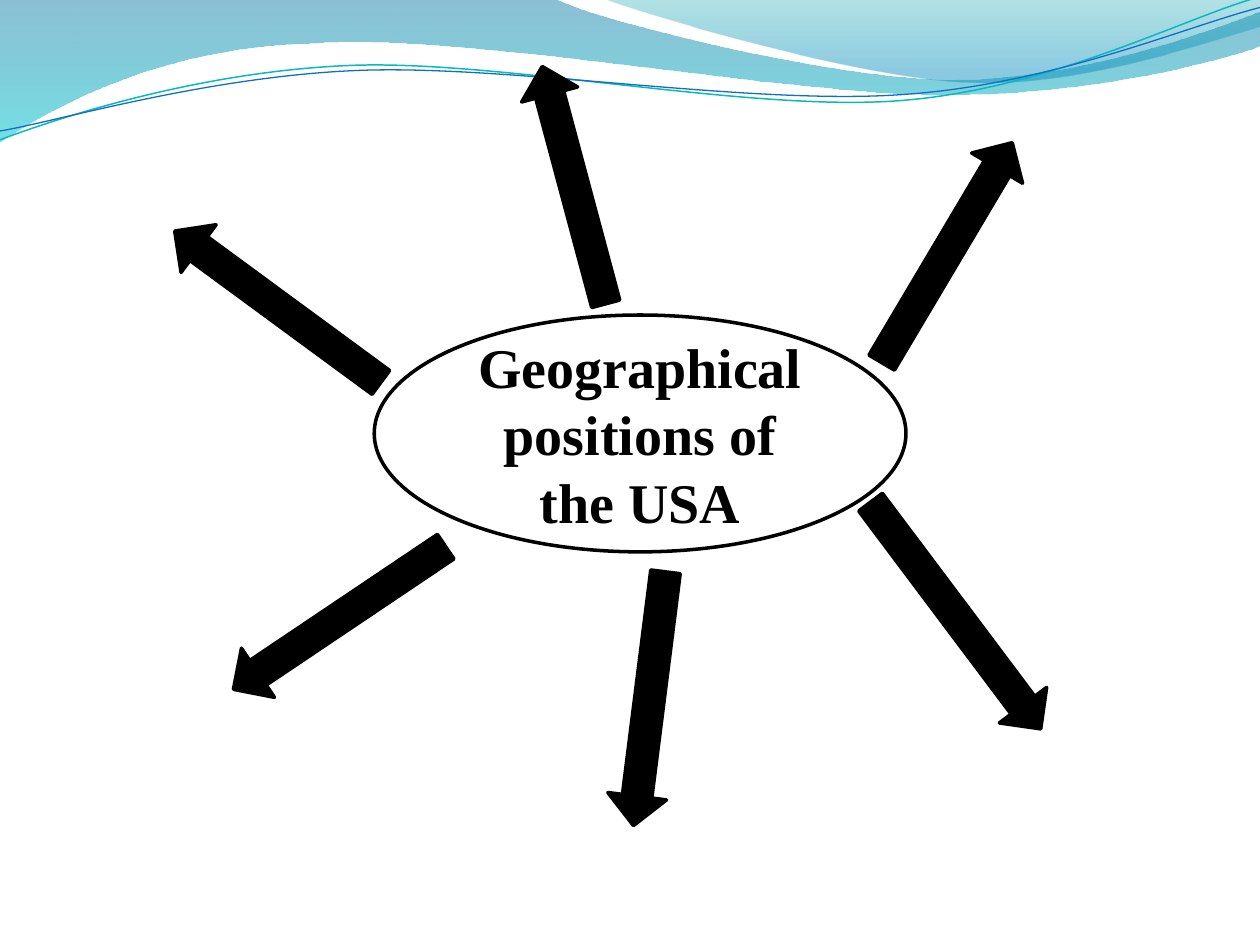
from math import cos, radians, sin

from lxml.etree import SubElement
from pptx import Presentation
from pptx.dml.color import RGBColor
from pptx.enum.shapes import MSO_SHAPE
from pptx.enum.text import MSO_ANCHOR, PP_ALIGN
from pptx.oxml.ns import qn
from pptx.util import Inches, Pt

BLACK, WHITE = "000000", "FFFFFF"
LINE_TILT = 357.3

# Waves: a start point, then lines (one point) and Bezier curves (three points)
BACK_WAVE = [(0, 0), [(4.4, -0.01)],
             [(4.76, 0.17), (6.64, 0.63), (7.58, 0.63)],
             [(8.53, 0.63), (9.58, 0.26), (10, 0.09)], [(10.01, 0.36)],
             [(9.83, 0.44), (8.7, 0.76), (7.46, 0.75)],
             [(6.22, 0.75), (3.82, 0.28), (2.57, 0.34)],
             [(1.29, 0.36), (0.46, 0.83), (-0.01, 1.13)]]
RIGHT_WAVE = [(4.79, -0.01), [(5.09, 0.11), (6.82, 0.62), (7.69, 0.65)],
              [(8.56, 0.69), (9.61, 0.32), (10, 0.21)], [(10, 0)]]
TEAL_LINE = [(0, 1.11), [(0.48, 0.93), (1.58, 0.57), (2.77, 0.52)],
             [(3.95, 0.47), (5.93, 0.89), (7.13, 0.8)],
             [(8.33, 0.71), (9.38, 0.15), (9.98, -0.02)]]
BLUE_LINE = [(0, 1.04), [(0.47, 0.96), (1.64, 0.61), (2.83, 0.56)],
             [(4.03, 0.51), (5.97, 0.84), (7.17, 0.75)],
             [(8.36, 0.67), (9.41, 0.21), (10, 0.06)]]

# Arrows: left, top, length, thickness, rotation
ARROWS = [(1.19, 2.2, 2.03, 0.47, 36.3),
          (3.58, 1.24, 1.95, 0.46, 75),
          (1.68, 4.67, 2.03, 0.47, 326.1),
          (4.14, 5.31, 2.03, 0.47, 277.2),
          (6.5, 1.77, 2.03, 0.47, 120.7),
          (6.46, 4.65, 2.25, 0.47, 233.1)]


def color(hex_value):
    return RGBColor.from_string(hex_value)


def outline(shape, hex_value, width):
    shape.line.color.rgb = color(hex_value)
    shape.line.width = Pt(width)


def turn(wave, center, degrees):
    """Turn every point of a wave clockwise about a center."""
    cx, cy = center
    c, s = cos(radians(degrees)), sin(radians(degrees))

    def turned(point):
        x, y = point[0] - cx, point[1] - cy
        return cx + x * c - y * s, cy + x * s + y * c

    start, *segments = wave
    return [turned(start), *([turned(p) for p in part] for part in segments)]


def add_wave(slide, wave, closed):
    start, *segments = wave
    vertices = [(Inches(x), Inches(y))
                for x, y in [start, *(p for part in segments for p in part)]]
    builder = slide.shapes.build_freeform(*vertices[0])
    builder.add_line_segments(vertices[1:], close=closed)
    shape = builder.convert_to_shape()
    shape.shadow.inherit = False

    # Join the three points of each curve into one Bezier segment
    steps = iter(list(shape._element.iter(qn("a:lnTo"))))
    for segment in segments:
        group = [next(steps) for _ in segment]
        if len(group) == 3:
            curve = group[0]
            bezier = curve.makeelement(qn("a:cubicBezTo"))
            curve.addprevious(bezier)
            for step in group:
                bezier.append(step[0])
                step.getparent().remove(step)
    return shape


def add_gradient_wave(slide, wave, stops):
    """Fill a wave from top to bottom; stops are position, colour, opacity."""
    shape = add_wave(slide, wave, True)
    shape.line.fill.background()
    shape.fill.gradient()
    shape.fill.gradient_angle = 270
    for stop, (position, hex_value, _) in zip(shape.fill.gradient_stops, stops):
        stop.position = position
        stop.color.rgb = color(hex_value)
    stop_colors = list(shape._element.spPr.iter(qn("a:srgbClr")))
    for stop_color, (_, _, opacity) in zip(stop_colors, stops):
        SubElement(stop_color, qn("a:alpha")).set("val", str(opacity * 1000))


def add_wave_line(slide, wave, hex_value, width):
    """Draw a wave as a level curve, tilted by its shape's rotation."""
    (x0, y0), (x1, y1) = wave[0], wave[-1][-1]
    center = (x0 + x1) / 2, (y0 + y1) / 2
    level = turn(wave, center, -LINE_TILT)
    shape = add_wave(slide, level, False)
    # The box turns about its own middle, so shift it to keep the curve in place
    points = [level[0], *(p for part in level[1:] for p in part)]
    xs, ys = zip(*points)
    middle = (min(xs) + max(xs)) / 2, (min(ys) + max(ys)) / 2
    target = turn([middle], center, LINE_TILT)[0]
    shape.left += Inches(target[0] - middle[0])
    shape.top += Inches(target[1] - middle[1])
    shape.rotation = LINE_TILT
    shape.fill.background()
    outline(shape, hex_value, width)


def add_figure(slide, preset, left, top, width, height, fill):
    shape = slide.shapes.add_shape(
        preset, Inches(left), Inches(top), Inches(width), Inches(height))
    shape.shadow.inherit = False
    shape.fill.solid()
    shape.fill.fore_color.rgb = color(fill)
    outline(shape, BLACK, 2)
    return shape


def add_topic(slide, text):
    topic = add_figure(slide, MSO_SHAPE.OVAL, 2.97, 2.5, 4.22, 1.88, WHITE)
    frame = topic.text_frame
    frame.word_wrap = True
    frame.vertical_anchor = MSO_ANCHOR.MIDDLE
    paragraph = frame.paragraphs[0]
    paragraph.text = text
    paragraph.alignment = PP_ALIGN.CENTER
    font = paragraph.font
    font.name, font.size, font.bold = "Times New Roman", Pt(32), True
    font.color.rgb = color(BLACK)


def main():
    deck = Presentation()
    deck.slide_width, deck.slide_height = Inches(10), Inches(7.5)
    slide = deck.slides.add_slide(deck.slide_layouts[6])

    # Wave decoration along the top
    add_gradient_wave(slide, BACK_WAVE, [(0, "0074A1", 45), (1, "00C6CF", 55)])
    add_gradient_wave(slide, RIGHT_WAVE, [(0, "00A1A9", 30), (0.8, "008BBF", 45)])
    add_wave_line(slide, TEAL_LINE, "0AB8BF", 0.85)
    add_wave_line(slide, BLUE_LINE, "0F6FC6", 0.75)

    # Central topic and the arrows around it
    add_topic(slide, "Geographical positions of the USA")
    for *box, rotation in ARROWS:
        arrow = add_figure(slide, MSO_SHAPE.LEFT_ARROW, *box, BLACK)
        arrow.rotation = rotation

    deck.save("out.pptx")


if __name__ == "__main__":
    main()
